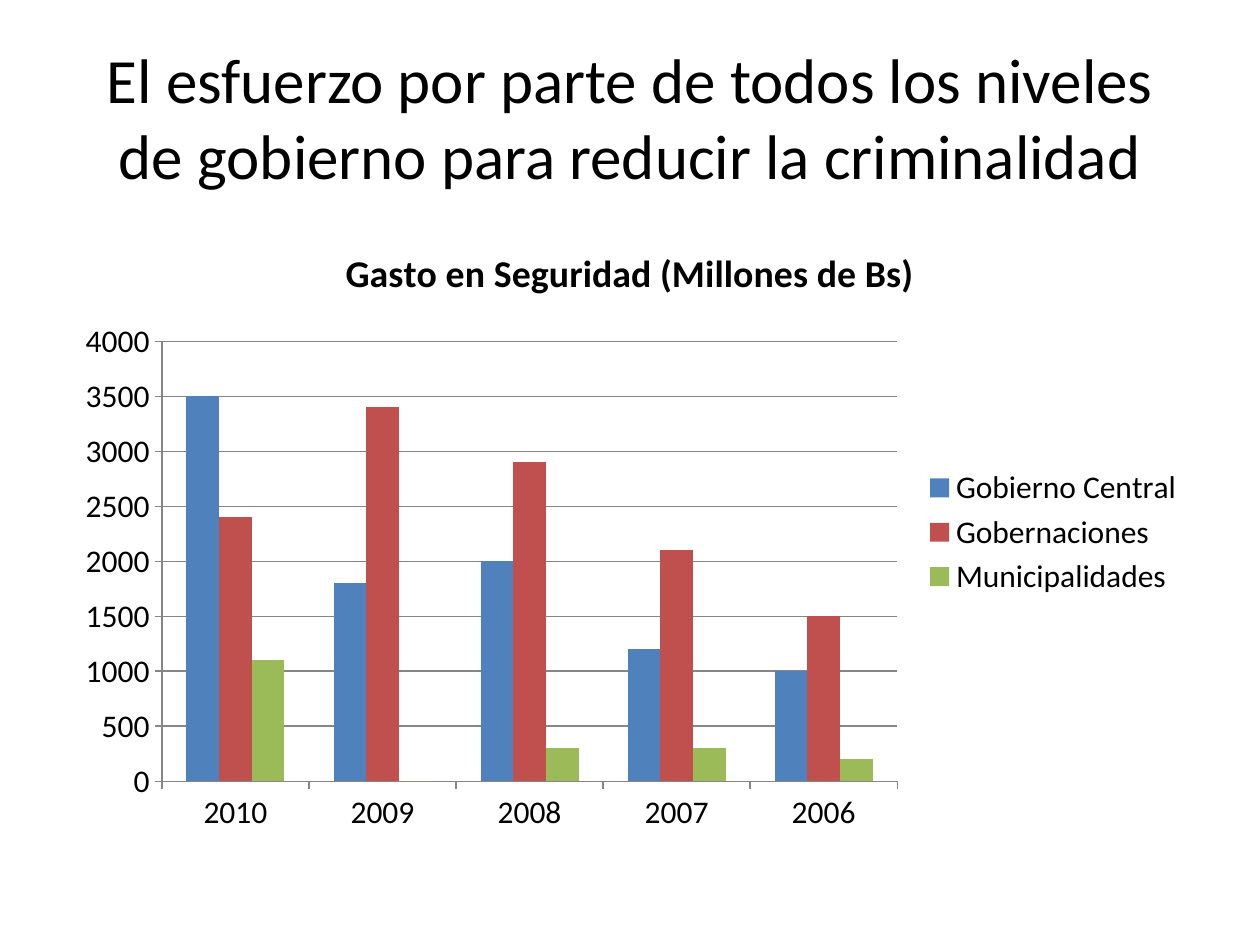
from pptx import Presentation
from pptx.chart.data import CategoryChartData
from pptx.dml.color import RGBColor
from pptx.enum.chart import XL_CHART_TYPE, XL_LEGEND_POSITION, XL_TICK_MARK
from pptx.enum.text import MSO_ANCHOR, PP_ALIGN
from pptx.util import Inches, Pt

COLUMNS = XL_CHART_TYPE.COLUMN_CLUSTERED
LEGEND_RIGHT = XL_LEGEND_POSITION.RIGHT
TICK_OUTSIDE = XL_TICK_MARK.OUTSIDE
MIDDLE = MSO_ANCHOR.MIDDLE
CENTER = PP_ALIGN.CENTER

FONT = "Calibri"
COLORS = {
    "text": "000000",
    "rule": "868686",
    "Gobierno Central": "4F81BD",
    "Gobernaciones": "C0504D",
    "Municipalidades": "9BBB59",
}
YEARS = ["2010", "2009", "2008", "2007", "2006"]
SPENDING = {
    "Gobierno Central": [3500, 1800, 2000, 1200, 1000],
    "Gobernaciones": [2400, 3400, 2900, 2100, 1500],
    "Municipalidades": [1100, 0, 300, 300, 200],
}


def color(key):
    """Return the palette colour stored under key."""
    return RGBColor.from_string(COLORS[key])


def style_font(font, size, bold=False):
    """Apply the slide's typeface and text colour."""
    font.name, font.size, font.bold = FONT, Pt(size), bold
    font.color.rgb = color("text")


def style_rule(line):
    """Give an axis or gridline its thin grey stroke."""
    line.color.rgb = color("rule")
    line.width = Pt(0.75)


def place_heading(slide, box):
    """Fill the title placeholder and fit it to box."""
    heading = slide.shapes.title
    heading.left, heading.top, heading.width, heading.height = box
    frame = heading.text_frame
    frame.text = ("El esfuerzo por parte de todos los niveles de gobierno "
                  "para reducir la criminalidad")
    frame.word_wrap = True
    frame.vertical_anchor = MIDDLE
    paragraph = frame.paragraphs[0]
    paragraph.alignment = CENTER
    style_font(paragraph.runs[0].font, 36)


def place_spending_chart(slide, box):
    """Draw the security spending by level of government in box."""
    data = CategoryChartData()
    data.categories = YEARS
    for level, amounts in SPENDING.items():
        data.add_series(level, amounts)
    chart = slide.shapes.add_chart(COLUMNS, *box, data).chart
    style_font(chart.font, 18)

    chart.has_title = True
    caption = chart.chart_title.text_frame
    caption.text = "Gasto en Seguridad (Millones de Bs)"
    style_font(caption.paragraphs[0].runs[0].font, 21.6, bold=True)
    chart.chart_title.include_in_layout = False

    chart.has_legend = True
    chart.legend.position = LEGEND_RIGHT
    chart.legend.include_in_layout = False

    for axis in (chart.category_axis, chart.value_axis):
        axis.major_tick_mark = TICK_OUTSIDE
        style_rule(axis.format.line)
    amounts_axis = chart.value_axis
    amounts_axis.minimum_scale, amounts_axis.maximum_scale = 0, 4000
    amounts_axis.major_unit = 500
    amounts_axis.has_major_gridlines = True
    style_rule(amounts_axis.major_gridlines.format.line)

    plot = chart.plots[0]
    plot.gap_width, plot.overlap = 150, 0
    plot.vary_by_categories = False
    for level in plot.series:
        level.invert_if_negative = False
        level.format.fill.solid()
        level.format.fill.fore_color.rgb = color(level.name)


def main():
    """Build the slide and save it."""
    deck = Presentation()
    deck.slide_width, deck.slide_height = Inches(10), Inches(7.5)
    slide = deck.slides.add_slide(deck.slide_layouts[5])

    def share(left, top, width, height):
        """Turn shares of the slide into a box."""
        return (int(deck.slide_width * left), int(deck.slide_height * top),
                int(deck.slide_width * width), int(deck.slide_height * height))

    place_heading(slide, share(0.05, 0.04, 0.9, 1 / 6))
    place_spending_chart(slide, share(0.05, 7 / 30, 0.9, 0.66))
    deck.save("out.pptx")


if __name__ == "__main__":
    main()
